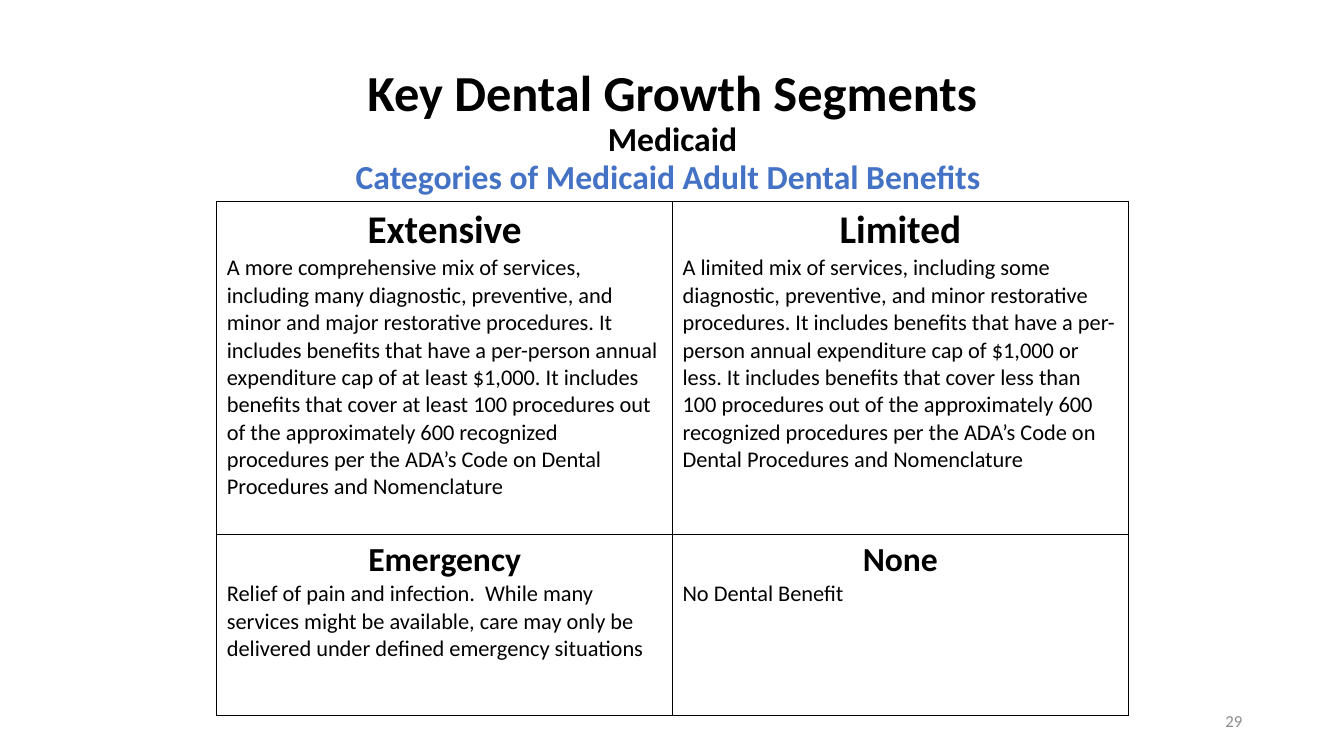
from lxml import etree
from pptx import Presentation
from pptx.dml.color import RGBColor
from pptx.enum.text import MSO_ANCHOR, PP_ALIGN
from pptx.oxml.ns import qn
from pptx.util import Inches, Pt

LEFT, CENTER, RIGHT = PP_ALIGN.LEFT, PP_ALIGN.CENTER, PP_ALIGN.RIGHT
TOP, MIDDLE = MSO_ANCHOR.TOP, MSO_ANCHOR.MIDDLE
FONT = "Calibri"
BLACK, BLUE, GRAY = "000000", "4472C4", "8C8C8C"

TITLE = [("Key Dental Growth Segments", 36), ("Medicaid", 24)]
SUBTITLE = "Categories of Medicaid Adult Dental Benefits"
PAGE = "29"
BENEFITS = [
    [
        ("Extensive", "A more comprehensive mix of services, including many diagnostic, preventive, and minor and major restorative procedures. It includes benefits that have a per-person annual expenditure cap of at least $1,000. It includes benefits that cover at least 100 procedures out of the approximately 600 recognized procedures per the ADA’s Code on Dental Procedures and Nomenclature"),
        ("Limited", "A limited mix of services, including some diagnostic, preventive, and minor restorative procedures. It includes benefits that have a per-person annual expenditure cap of $1,000 or less. It includes benefits that cover less than 100 procedures out of the approximately 600 recognized procedures per the ADA’s Code on Dental Procedures and Nomenclature"),
    ],
    [
        ("Emergency", "Relief of pain and infection.  While many services might be available, care may only be delivered under defined emergency situations"),
        ("None", "No Dental Benefit"),
    ],
]
HEADING_SIZES = [28, 24]
ROW_HEIGHTS = [3.3, 1.8]
COL_WIDTH = 4.52


def style(r, size, color=BLACK, bold=False):
    r.font.name = FONT
    r.font.size = Pt(size)
    r.font.bold = bold
    r.font.color.rgb = RGBColor.from_string(color)


def add_box(slide, box, text, align, anchor, wrap=True):
    tf = slide.shapes.add_textbox(*map(Inches, box)).text_frame
    tf.word_wrap = wrap
    tf.vertical_anchor = anchor
    p = tf.paragraphs[0]
    p.text = text
    p.alignment = align
    return p


def set_borders(cell, color, width):
    tc_pr = cell._tc.get_or_add_tcPr()
    for i, side in enumerate(("lnL", "lnR", "lnT", "lnB")):
        ln = etree.Element(qn(f"a:{side}"), w=str(Pt(width)))
        fill = etree.SubElement(ln, qn("a:solidFill"))
        etree.SubElement(fill, qn("a:srgbClr"), val=color)
        tc_pr.insert(i, ln)


def fill_cell(cell, heading, body, heading_size):
    cell.fill.background()
    set_borders(cell, BLACK, 1)
    tf = cell.text_frame
    tf.text = f"{heading}\n{body}"
    formats = [(CENTER, heading_size, True), (LEFT, 16, False)]
    for p, (align, size, bold) in zip(tf.paragraphs, formats):
        p.alignment = align
        style(p.runs[0], size, bold=bold)


def main():
    prs = Presentation()
    prs.slide_width, prs.slide_height = Inches(13.33), Inches(7.5)
    slide = prs.slides.add_slide(prs.slide_layouts[6])

    p = add_box(slide, (0.92, 0.4, 11.5, 1.45),
                "\v".join(text for text, _ in TITLE), CENTER, MIDDLE)
    p.line_spacing = 0.9
    for r, (_, size) in zip(p.runs, TITLE):
        style(r, size, bold=True)

    p = add_box(slide, (9.42, 6.95, 3, 0.4), PAGE, RIGHT, MIDDLE)
    style(p.runs[0], 12, GRAY)

    rows, cols = len(BENEFITS), len(BENEFITS[0])
    box = (2.15, 2, cols * COL_WIDTH, sum(ROW_HEIGHTS))
    table = slide.shapes.add_table(rows, cols, *map(Inches, box)).table
    table.first_row = table.horz_banding = False
    for col in table.columns:
        col.width = Inches(COL_WIDTH)
    for i, benefits in enumerate(BENEFITS):
        table.rows[i].height = Inches(ROW_HEIGHTS[i])
        for j, (heading, body) in enumerate(benefits):
            fill_cell(table.cell(i, j), heading, body, HEADING_SIZES[i])

    p = add_box(slide, (3.43, 1.5, 6.47, 0.5), SUBTITLE, LEFT, TOP, wrap=False)
    style(p.runs[0], 24, BLUE, True)

    prs.save("out.pptx")


if __name__ == "__main__":
    main()
